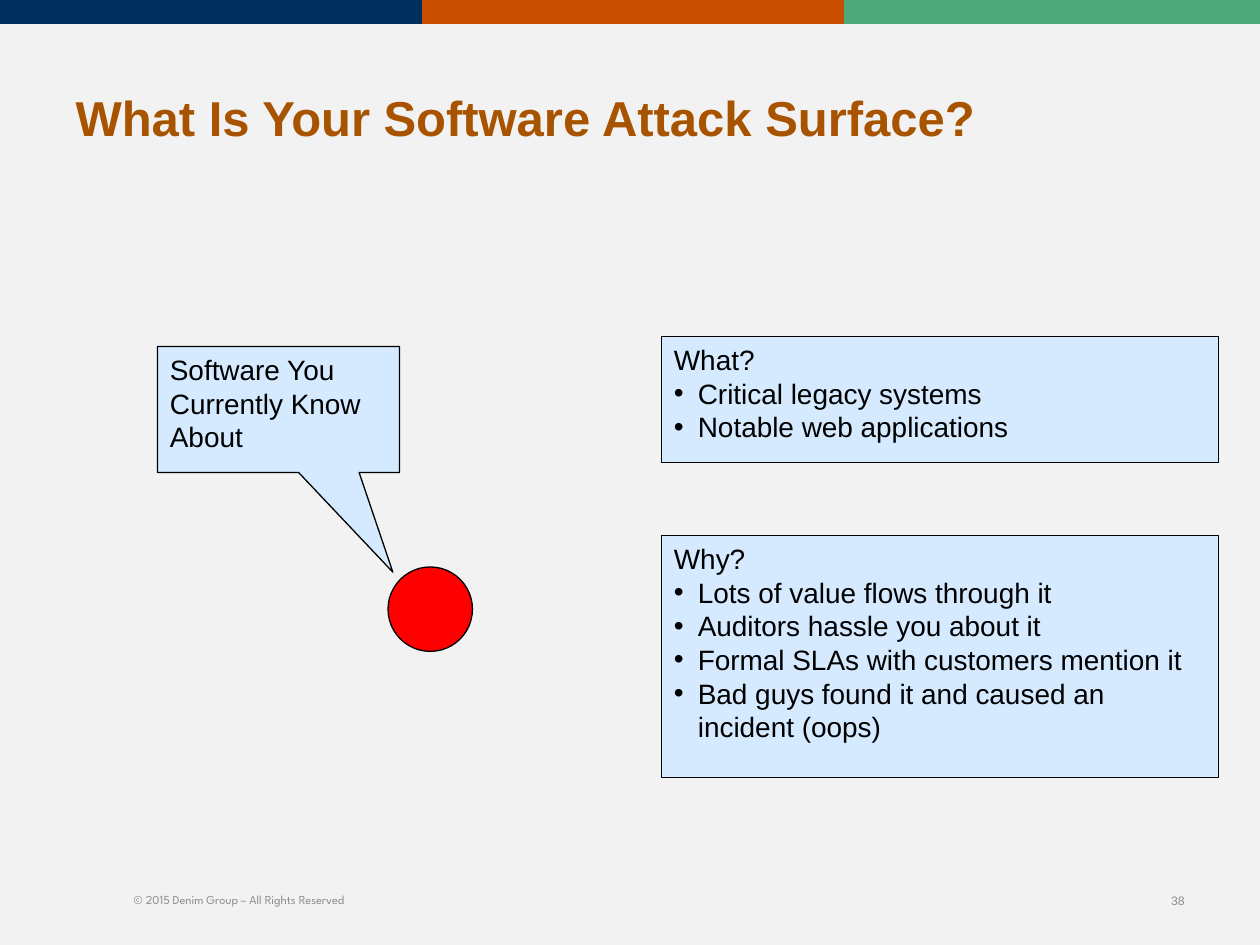
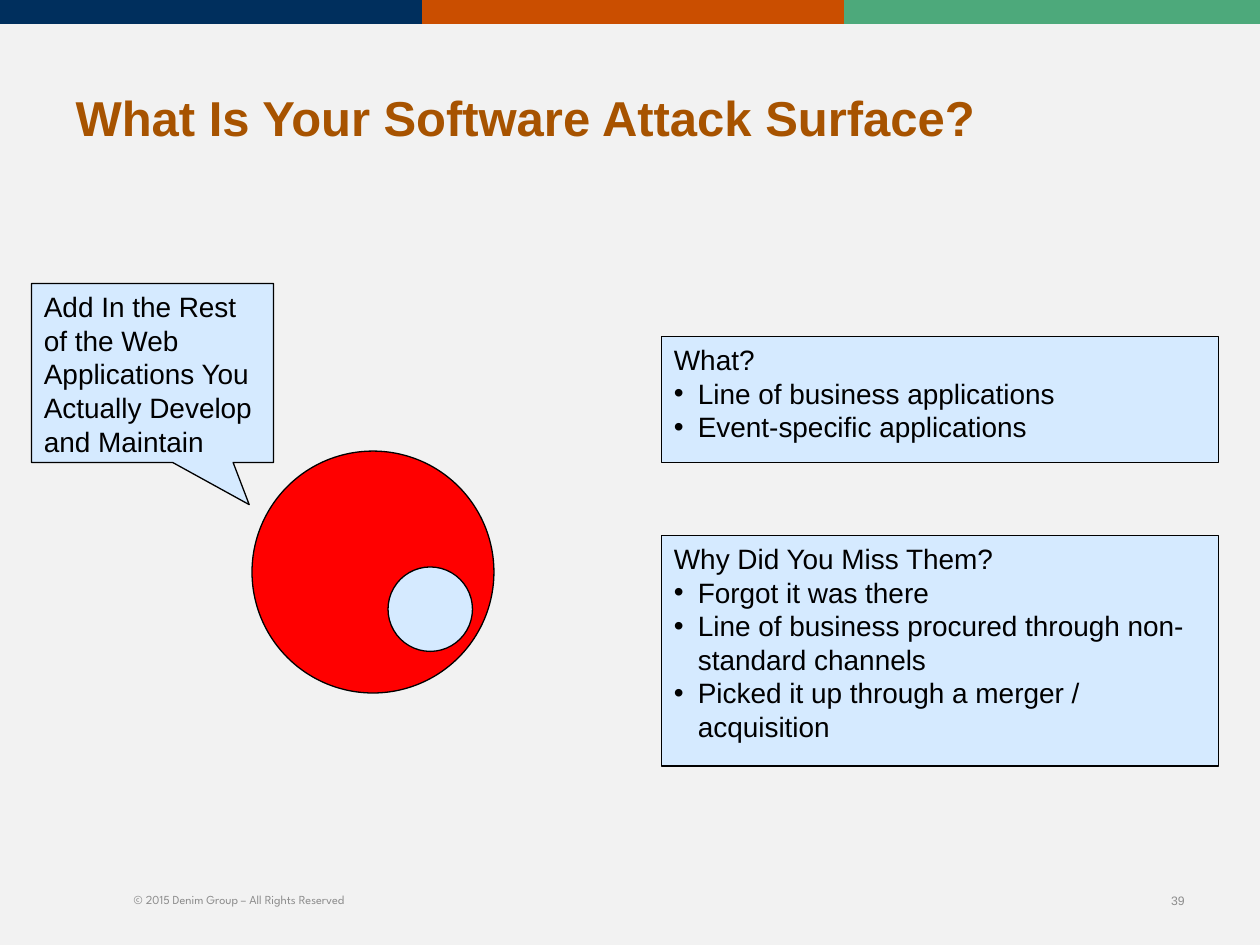
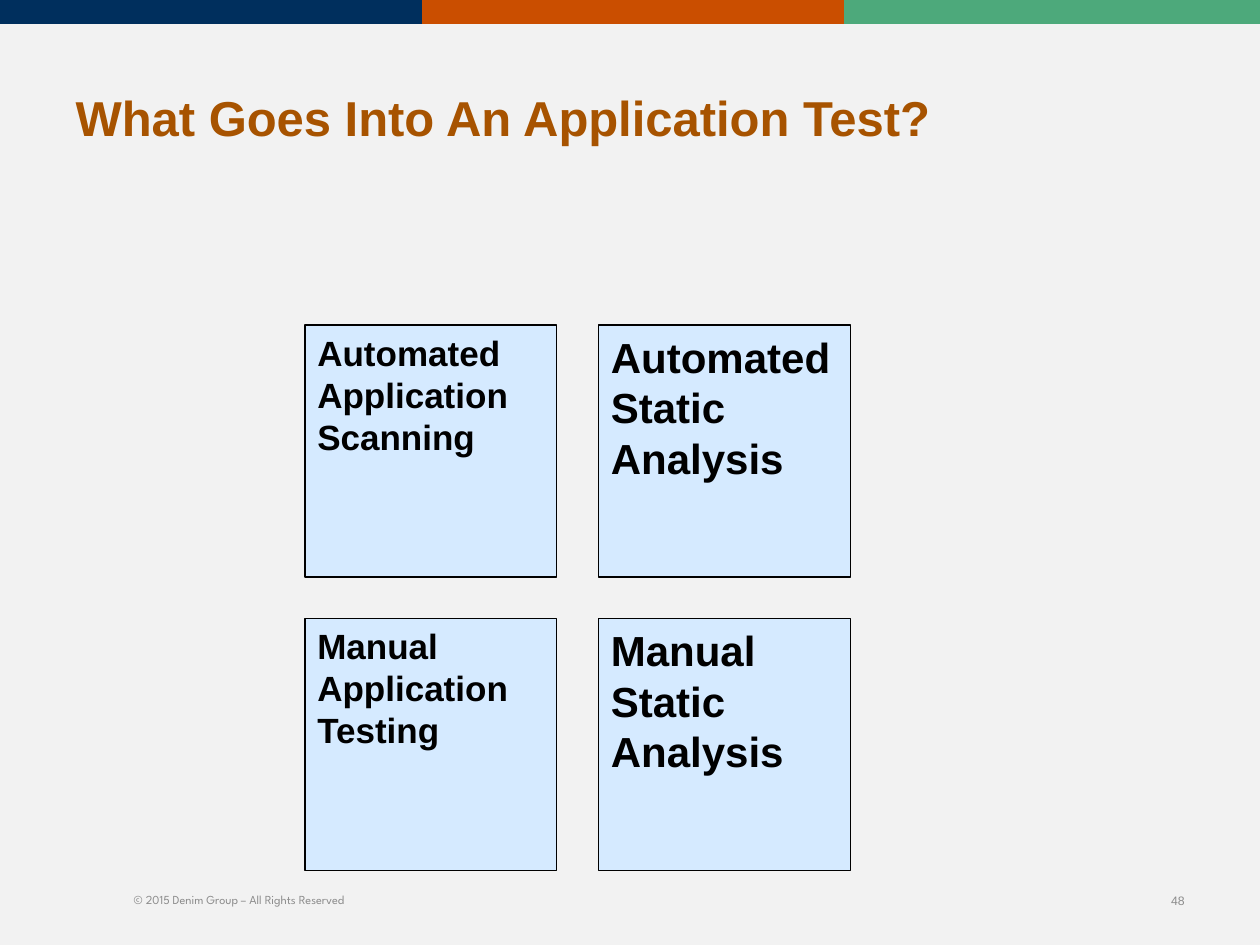
from dataclasses import dataclass

from lxml.etree import SubElement
from pptx import Presentation
from pptx.dml.color import RGBColor
from pptx.enum.shapes import MSO_SHAPE as Preset
from pptx.enum.text import MSO_ANCHOR as Anchor, PP_ALIGN as Align
from pptx.oxml.ns import qn
from pptx.presentation import Presentation as Deck
from pptx.shapes.autoshape import Shape
from pptx.slide import Slide
from pptx.util import Inches, Pt

NAVY = RGBColor(0x00, 0x2F, 0x5D)
ORANGE = RGBColor(0xCA, 0x4E, 0x00)
GREEN = RGBColor(0x4D, 0xA9, 0x7B)
BROWN = RGBColor(0xA7, 0x53, 0x00)
GRAY = RGBColor(0x8C, 0x8C, 0x8C)
BACKGROUND = RGBColor(0xF2, 0xF2, 0xF2)
PALE_BLUE = RGBColor(0xD5, 0xEA, 0xFF)
RED = RGBColor(0xFF, 0x00, 0x00)
BLACK = RGBColor(0x00, 0x00, 0x00)

FONT = "Arial"
FOOTER_FONT = "League Spartan"
COPYRIGHT = "© 2015 Denim Group – All Rights Reserved"
SLIDE_WIDTH, SLIDE_HEIGHT = 10, 7.5
BAND_WIDTH, BAND_HEIGHT = 3.35, 0.19
BULLET_INDENT = Inches(0.19)


@dataclass
class Box:
    left: float
    top: float
    width: float
    height: float

    def lengths(self) -> tuple[int, int, int, int]:
        return (Inches(self.left), Inches(self.top),
                Inches(self.width), Inches(self.height))


@dataclass
class Callout:
    text: str
    box: Box
    tip: tuple[float, float]


@dataclass
class Circle:
    box: Box
    color: RGBColor


@dataclass
class Panel:
    heading: str
    bullets: list[str]
    top: float
    height: float


@dataclass
class SurfaceSlide:
    number: int
    circles: list[Circle]
    callout: Callout
    panels: list[Panel]


@dataclass
class TestTile:
    text: str
    column: int
    row: int
    size: int


KNOWN_SOFTWARE = Box(3.08, 4.5, 0.67, 0.67)
WEB_APPLICATIONS = Box(2, 3.58, 1.92, 1.92)

SURFACE_SLIDES = [
    SurfaceSlide(
        38,
        [Circle(KNOWN_SOFTWARE, RED)],
        Callout("Software You Currently Know About",
                Box(1.25, 2.75, 1.92, 1), (0.473, 1.292)),
        [Panel("What?", ["Critical legacy systems", "Notable web applications"],
               2.67, 1),
         Panel("Why?", ["Lots of value flows through it",
                        "Auditors hassle you about it",
                        "Formal SLAs with customers mention it",
                        "Bad guys found it and caused an incident (oops)"],
               4.25, 1.92)]),
    SurfaceSlide(
        39,
        [Circle(WEB_APPLICATIONS, RED), Circle(KNOWN_SOFTWARE, PALE_BLUE)],
        Callout("Add In the Rest of the Web Applications You Actually "
                "Develop and Maintain",
                Box(0.25, 2.25, 1.92, 1.42), (0.4, 0.736)),
        [Panel("What?", ["Line of business applications",
                         "Event-specific applications"], 2.67, 1),
         Panel("Why Did You Miss Them?",
               ["Forgot it was there",
                "Line of business procured through non-standard channels",
                "Picked it up through a merger / acquisition"],
               4.25, 1.83)]),
]

TEST_TILES = [
    TestTile("Automated Application Scanning", 0, 0, 20),
    TestTile("Automated Static Analysis", 1, 0, 24),
    TestTile("Manual Application Testing", 0, 1, 20),
    TestTile("Manual Static Analysis", 1, 1, 24),
]
TILE_LEFT, TILE_TOP, TILE_SIDE, TILE_STEP = 2.42, 2.58, 2, 2.33


def write(shape: Shape, lines: list[str], size: float, color: RGBColor = BLACK,
          font: str = FONT, bold: bool = False, align: Align = Align.LEFT,
          anchor: Anchor = Anchor.TOP) -> None:
    """Fill a shape with text; every line after the first is a bullet."""
    frame = shape.text_frame
    frame.word_wrap = True
    frame.vertical_anchor = anchor
    for index, line in enumerate(lines):
        paragraph = frame.add_paragraph() if index else frame.paragraphs[0]
        paragraph.text = line
        paragraph.alignment = align
        if index:
            properties = paragraph._p.get_or_add_pPr()
            properties.set("marL", str(BULLET_INDENT))
            properties.set("indent", str(-BULLET_INDENT))
            SubElement(properties, qn("a:buFont")).set("typeface", FONT)
            SubElement(properties, qn("a:buChar")).set("char", "•")
        paragraph.font.name = font
        paragraph.font.size = Pt(size)
        paragraph.font.bold = bold
        paragraph.font.color.rgb = color


def add_filled(slide: Slide, preset: Preset, box: Box, color: RGBColor,
               outlined: bool = True) -> Shape:
    shape = slide.shapes.add_shape(preset, *box.lengths())
    shape.shadow.inherit = False
    shape.fill.solid()
    shape.fill.fore_color.rgb = color
    if outlined:
        shape.line.color.rgb = BLACK
        shape.line.width = Pt(0.75)
    else:
        shape.line.fill.background()
    return shape


def add_footer(slide: Slide, text: str, left: float, top: float, font: str) -> None:
    footer = slide.shapes.add_textbox(*Box(left, top, 2.33, 0.4).lengths())
    write(footer, [text], 7, GRAY, font, align=Align.RIGHT, anchor=Anchor.MIDDLE)


def add_base_slide(presentation: Deck, title_text: str, number: int) -> Slide:
    """Add a slide with its title, top bands and footers."""
    slide = presentation.slides.add_slide(presentation.slide_layouts[5])
    title = slide.shapes.title
    title.left, title.top, title.width, title.height = Box(0.5, 0.3, 9, 1.25).lengths()
    write(title, [title_text], 28, BROWN, bold=True, anchor=Anchor.MIDDLE)
    for index, color in enumerate((NAVY, ORANGE, GREEN)):
        left = index * BAND_WIDTH
        width = min(BAND_WIDTH, SLIDE_WIDTH - left)
        add_filled(slide, Preset.RECTANGLE, Box(left, 0, width, BAND_HEIGHT),
                   color, outlined=False)
    add_footer(slide, COPYRIGHT, 0.5, 6.94, FOOTER_FONT)
    add_footer(slide, str(number), 7.17, 6.95, FONT)
    return slide


def add_callout(slide: Slide, callout: Callout) -> None:
    shape = add_filled(slide, Preset.RECTANGULAR_CALLOUT, callout.box, PALE_BLUE)
    shape.adjustments[0], shape.adjustments[1] = callout.tip
    write(shape, [callout.text], 16)


def add_panel(slide: Slide, panel: Panel) -> None:
    box = Box(5.25, panel.top, 4.42, panel.height)
    shape = add_filled(slide, Preset.RECTANGLE, box, PALE_BLUE)
    write(shape, [panel.heading, *panel.bullets], 16)


def add_surface_slide(presentation: Deck, content: SurfaceSlide) -> None:
    slide = add_base_slide(presentation, "What Is Your Software Attack Surface?",
                           content.number)
    for circle in content.circles:
        add_filled(slide, Preset.OVAL, circle.box, circle.color)
    add_callout(slide, content.callout)
    for panel in content.panels:
        add_panel(slide, panel)


def add_test_slide(presentation: Deck) -> None:
    slide = add_base_slide(presentation, "What Goes Into An Application Test?", 48)
    for tile in TEST_TILES:
        box = Box(TILE_LEFT + tile.column * TILE_STEP,
                  TILE_TOP + tile.row * TILE_STEP, TILE_SIDE, TILE_SIDE)
        shape = add_filled(slide, Preset.RECTANGLE, box, PALE_BLUE)
        write(shape, [tile.text], tile.size, bold=True)


def main() -> None:
    presentation = Presentation()
    presentation.slide_width = Inches(SLIDE_WIDTH)
    presentation.slide_height = Inches(SLIDE_HEIGHT)
    background = presentation.slide_master.background.fill
    background.solid()
    background.fore_color.rgb = BACKGROUND
    for content in SURFACE_SLIDES:
        add_surface_slide(presentation, content)
    add_test_slide(presentation)
    presentation.save("out.pptx")


if __name__ == "__main__":
    main()
